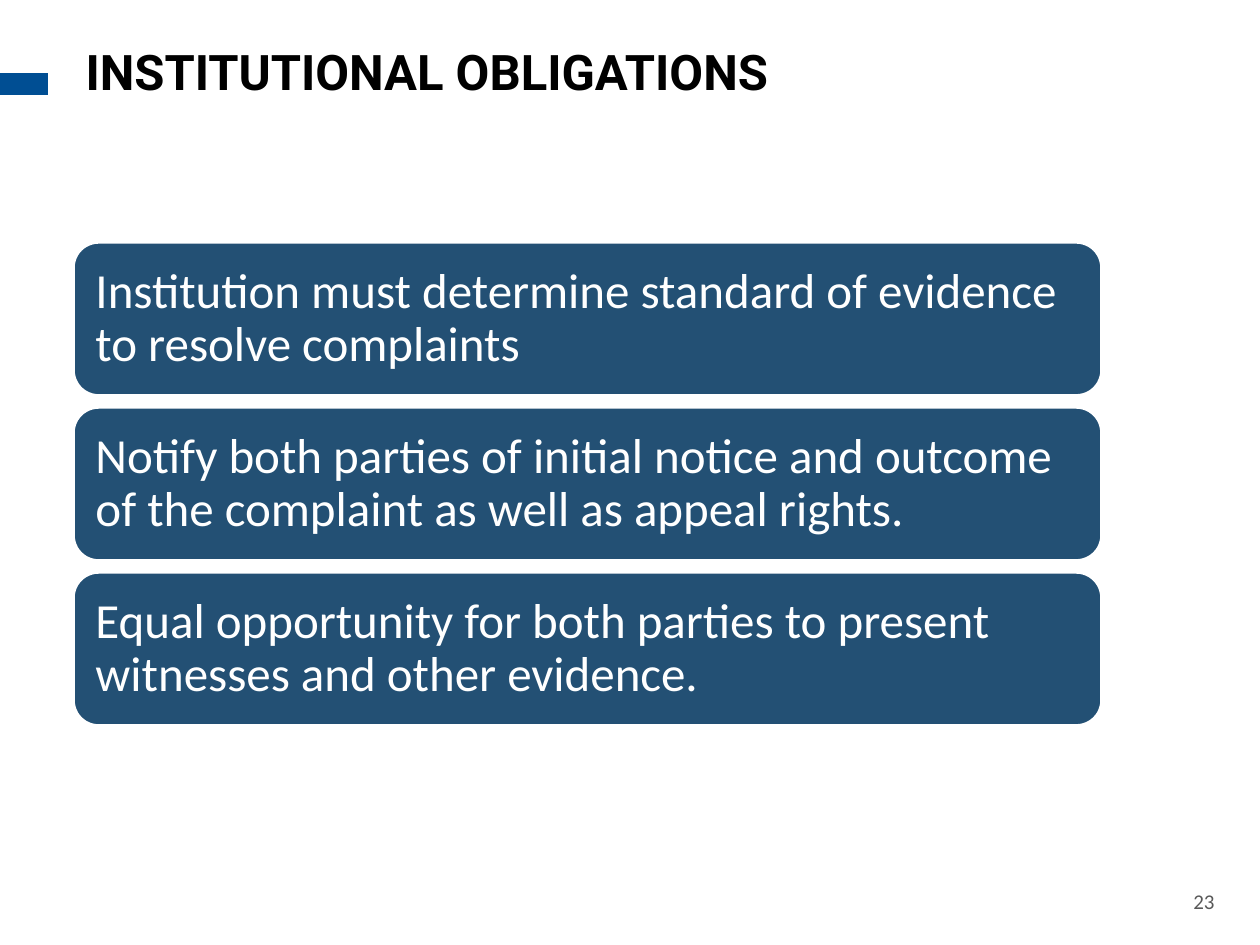
from typing import NamedTuple

from pptx import Presentation, util as u
from pptx.dml.color import RGBColor
from pptx.enum import shapes, text

PX = u.Inches(1) / 126

BLACK = RGBColor(0x00, 0x00, 0x00)
WHITE = RGBColor(0xFF, 0xFF, 0xFF)
GREY = RGBColor(0x59, 0x59, 0x59)
ACCENT_BLUE = RGBColor(0x00, 0x4E, 0x93)
CARD_BLUE = RGBColor(0x23, 0x50, 0x74)

TITLE_ONLY = 5
CARD_PITCH = 165


class Box(NamedTuple):
    left: int
    top: int
    width: int
    height: int

    def emu(self) -> list[int]:
        return [round(side * PX) for side in self]


FIRST_CARD = Box(73, 242, 1029, 154)
OBLIGATIONS = [
    "Institution must determine standard of evidence to resolve complaints",
    "Notify both parties of initial notice and outcome of the complaint"
    " as well as appeal rights.",
    "Equal opportunity for both parties to present witnesses and other evidence.",
]


def write(frame, words: str, *, size: int, color: RGBColor, font: str = "Calibri",
          bold: bool = False, align=text.PP_ALIGN.LEFT,
          anchor=text.MSO_ANCHOR.TOP, line_spacing: float = 1.0) -> None:
    frame.word_wrap = True
    frame.auto_size = text.MSO_AUTO_SIZE.NONE
    frame.vertical_anchor = anchor
    paragraph = frame.paragraphs[0]
    paragraph.alignment = align
    paragraph.line_spacing = line_spacing
    run = paragraph.add_run()
    run.text = words
    run.font.name = font
    run.font.size = u.Pt(size)
    run.font.bold = bold
    run.font.color.rgb = color


def add_block(slide, kind, box: Box, fill: RGBColor):
    block = slide.shapes.add_shape(kind, *box.emu())
    block.shadow.inherit = False
    block.fill.solid()
    block.fill.fore_color.rgb = fill
    block.line.fill.background()
    return block


def add_card(slide, box: Box, obligation: str) -> None:
    card = add_block(slide, shapes.MSO_SHAPE.ROUNDED_RECTANGLE, box, CARD_BLUE)
    card.line.color.rgb = WHITE
    card.line.width = u.Pt(2)
    frame = card.text_frame
    frame.margin_left = frame.margin_right = round(15 * PX)
    frame.margin_top = frame.margin_bottom = round(15 * PX)
    write(frame, obligation, size=28, color=WHITE,
          anchor=text.MSO_ANCHOR.MIDDLE, line_spacing=0.9)


def main() -> None:
    deck = Presentation()
    deck.slide_width, deck.slide_height = u.Inches(10), u.Inches(7.5)
    slide = deck.slides.add_slide(deck.slide_layouts[TITLE_ONLY])

    add_block(slide, shapes.MSO_SHAPE.RECTANGLE, Box(-1, 73, 49, 22), ACCENT_BLUE)

    title = slide.shapes.title
    title.left, title.top, title.width, title.height = Box(73, 42, 756, 242).emu()
    write(title.text_frame, "INSTITUTIONAL OBLIGATIONS", size=28, color=BLACK,
          font="Roboto", bold=True, line_spacing=0.9)

    for row, obligation in enumerate(OBLIGATIONS):
        top = FIRST_CARD.top + row * CARD_PITCH
        add_card(slide, FIRST_CARD._replace(top=top), obligation)

    page_number = slide.shapes.add_textbox(*Box(1167, 882, 60, 38).emu())
    write(page_number.text_frame, "23", size=12, color=GREY,
          align=text.PP_ALIGN.RIGHT)

    deck.save("out.pptx")


if __name__ == "__main__":
    main()
